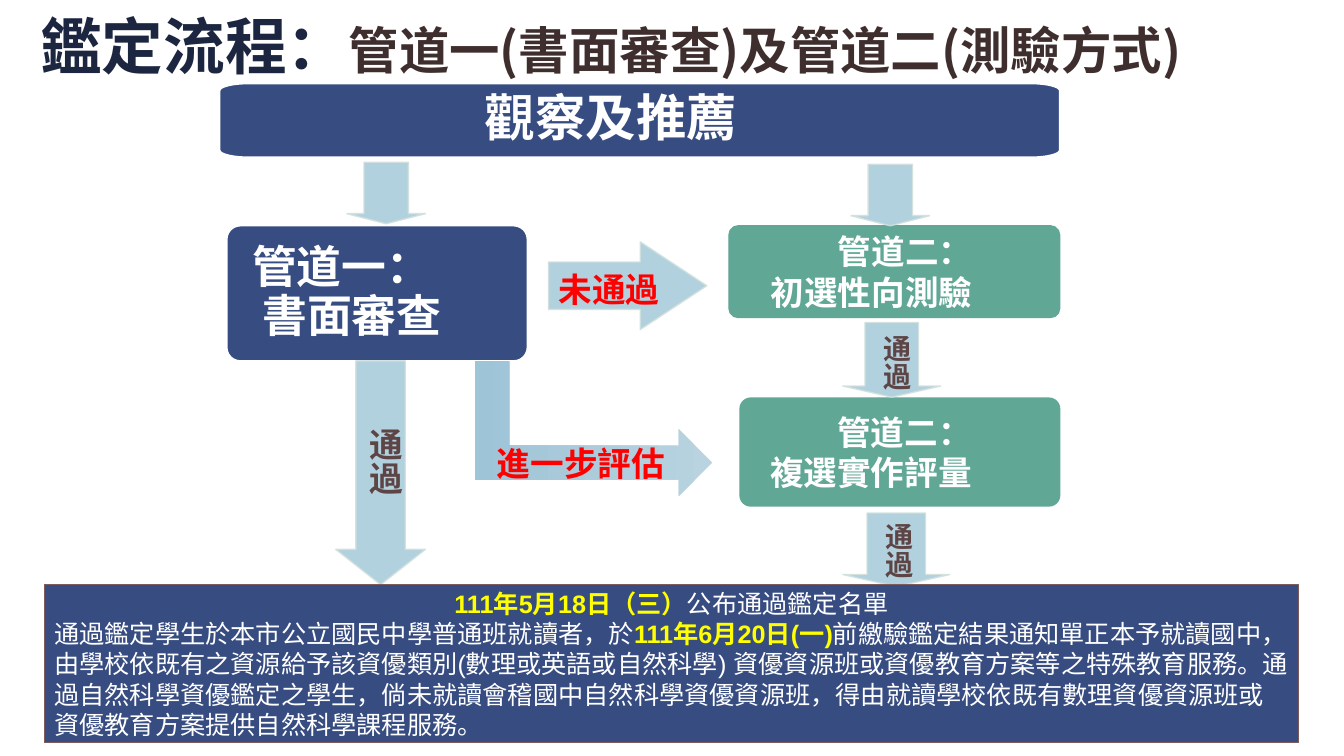
import math
import pptx
import pptx.util
import pptx.dml.color
import pptx.enum.shapes
import pptx.enum.text
import pptx.oxml.ns
from lxml import etree

PX = 9144
SC, TC, LATIN = "Noto Sans CJK SC", "Noto Sans CJK TC", "Arial"
KIND = pptx.enum.shapes.MSO_SHAPE
ALIGN = pptx.enum.text.PP_ALIGN
ANCHOR = pptx.enum.text.MSO_ANCHOR
HEX = {
    "navy": "374C81", "green": "61A796", "sky": "A9CCDC", "rim": "D2E1DD",
    "light": "B9D3E0", "deep": "9EC4D7", "ink": "1C2640", "brown": "3F2E2E",
    "pass": "5E4545", "red": "FF0000", "gold": "FFFF00", "white": "FFFFFF",
    "edge": "7E5C5C",
}

TITLE = [[("鑑定流程：", 44, "ink"), ("管道一(書面審查)及管道二(測驗方式)", 36, "brown")]]
BANNER = ((218, 83, 833, 73), (29, 7), [[("觀察及推薦", 36, "white")]])
BOXES = [
    ((225, 224, 298, 134), "navy", "white", 81, 0.9, 32, ("管道一： ", "書面審查")),
    ((723, 224, 328, 91), "green", "green", 84, 1, 24, ("管道二：", "初選性向測驗")),
    ((734, 395, 317, 107), "green", "green", 84, 1, 24, ("管道二：", "複選實作評量")),
]
ARROWS = [
    (KIND.DOWN_ARROW, (344, 161, 78, 61), 44, 10),
    (KIND.DOWN_ARROW, (844, 163, 78, 61), 44, 10),
    (KIND.DOWN_ARROW, (333, 358, 89, 222), 49, 35),
    (KIND.DOWN_ARROW, (836, 320, 97, 74), 53, 11),
    (KIND.DOWN_ARROW, (836, 509, 106, 73), 58, 12),
    (KIND.RIGHT_ARROW, (544, 240, 157, 87), 47, 66),
]
BEND = (522, 308, 134, 235)
LABELS = [
    ((346, 415, 61, 114), "通過", 24, "pass", True),
    ((844, 322, 67, 80), "通過", 20, "pass", True),
    ((840, 509, 73, 79), "通過", 20, "pass", True),
    ((544, 262, 132, 50), "未通過", 24, "red", False),
    ((483, 434, 188, 50), "進一步評估", 24, "red", False),
]
NOTE = ((44, 580, 1244, 157), [
    [("111年5月18日（三）", 18, "gold"), ("公布通過鑑定名單", 18, "white")],
    [("通過鑑定學生於本市公立國民中學普通班就讀者，於", 18, "white"),
     ("111年6月20日(一)", 18, "gold"),
     ("前繳驗鑑定結果通知單正本予就讀國中，由學校依既有之資源給予該資優類別"
      "(數理或英語或自然科學) 資優資源班或資優教育方案等之特殊教育服務。"
      "通過自然科學資優鑑定之學生，倘未就讀會稽國中自然科學資優資源班，"
      "得由就讀學校依既有數理資優資源班或資優教育方案提供自然科學課程服務。", 18, "white")],
])


def rgb(name):
    return pptx.dml.color.RGBColor.from_string(HEX[name])


def emu(spot):
    return [n * PX for n in spot]


def paint(shape, fill, line, width=1):
    shape.shadow.inherit = False
    shape.fill.solid()
    shape.fill.fore_color.rgb = rgb(fill)
    shape.line.color.rgb = rgb(line)
    shape.line.width = pptx.util.Pt(width)


def fade(shape):
    for color in shape.element.spPr.iter(pptx.oxml.ns.qn("a:srgbClr")):
        etree.SubElement(color, pptx.oxml.ns.qn("a:alpha")).set("val", "90000")


def write(shape, paras, align, anchor, pad=(10, 5, 10, 5), space=1, face=SC, east=SC, thin=()):
    frame = shape.text_frame
    frame.word_wrap = True
    frame.auto_size = pptx.enum.text.MSO_AUTO_SIZE.NONE
    frame.vertical_anchor = anchor
    frame.margin_left, frame.margin_top, frame.margin_right, frame.margin_bottom = emu(pad)
    for i, runs in enumerate(paras):
        para = frame.add_paragraph() if i else frame.paragraphs[0]
        para.alignment = align[i] if isinstance(align, list) else align
        para.line_spacing = space
        for text, size, color in runs:
            run = para.add_run()
            run.text = text
            font = run.font
            font.name, font.size, font.bold = face, pptx.util.Pt(size), color not in thin
            font.color.rgb = rgb(color)
            ea = etree.SubElement(font._element, pptx.oxml.ns.qn("a:ea"))
            ea.set("typeface", east)


def rounded(shapes, spot, curve):
    x, y, w, h = spot
    rx, ry = curve
    hubs = [(x + w - rx, y + h - ry), (x + rx, y + h - ry), (x + rx, y + ry), (x + w - rx, y + ry)]
    dots = []
    for i, (cx, cy) in enumerate(hubs):
        for step in range(9):
            turn = math.radians(90 * i + 90 * step / 8)
            dots.append((round((cx + rx * math.cos(turn)) * PX), round((cy + ry * math.sin(turn)) * PX)))
    pen = shapes.build_freeform(*dots[0])
    pen.add_line_segments(dots[1:], close=True)
    return pen.convert_to_shape()


def main():
    deck = pptx.Presentation()
    deck.slide_width, deck.slide_height = emu((1333, 750))
    slide = deck.slides.add_slide(deck.slide_layouts[5])
    shapes = slide.shapes

    title = shapes.title
    title.left, title.top, title.width, title.height = emu((30, -19, 1282, 106))
    write(title, TITLE, ALIGN.LEFT, ANCHOR.BOTTOM, space=0.9)

    spot, curve, paras = BANNER
    banner = rounded(shapes, spot, curve)
    paint(banner, "navy", "white")
    write(banner, paras, ALIGN.CENTER, ANCHOR.MIDDLE, (24, 15, 81, 15), 0.9)

    for spot, fill, line, right, space, size, lines in BOXES:
        box = shapes.add_shape(KIND.ROUNDED_RECTANGLE, *emu(spot))
        box.adjustments[0] = 0.1
        paint(box, fill, line)
        paras = [[(text, size, "white")] for text in lines]
        write(box, paras, ALIGN.RIGHT, ANCHOR.MIDDLE, (15, 15, right, 15), space, east=TC)

    for kind, spot, shaft, head in ARROWS:
        arrow = shapes.add_shape(kind, *emu(spot))
        across = spot[2] if kind == KIND.DOWN_ARROW else spot[3]
        arrow.adjustments[0] = shaft / across
        arrow.adjustments[1] = head / min(spot[2:])
        paint(arrow, "sky", "rim")
        fade(arrow)

    bend = shapes.add_shape(KIND.BENT_UP_ARROW, *emu(BEND))
    bend.rotation = 90
    bend.shadow.inherit = False
    bend.line.fill.background()
    bend.fill.gradient()
    bend.fill.gradient_angle = 270
    for stop, color in zip(bend.fill.gradient_stops, ("light", "deep")):
        stop.color.rgb = rgb(color)

    for spot, text, size, color, upright in LABELS:
        label = shapes.add_textbox(*emu(spot))
        write(label, [[(text, size, color)]], ALIGN.LEFT, ANCHOR.TOP)
        if upright:
            label.element.txBody.bodyPr.set("vert", "eaVert")

    spot, paras = NOTE
    note = shapes.add_shape(KIND.RECTANGLE, *emu(spot))
    paint(note, "navy", "edge", 0.5)
    write(note, paras, [ALIGN.CENTER, ALIGN.LEFT], ANCHOR.MIDDLE, face=LATIN, east=TC, thin=("white",))

    deck.save("out.pptx")


if __name__ == "__main__":
    main()
